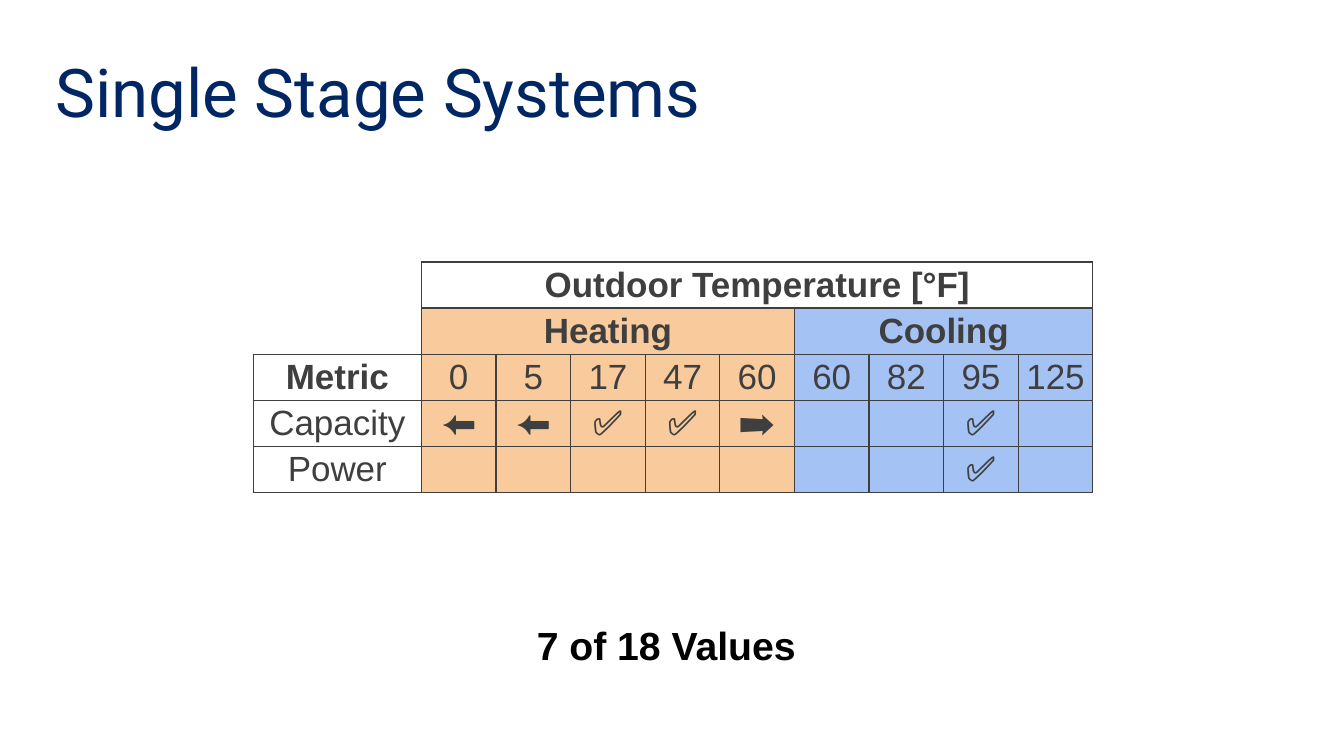
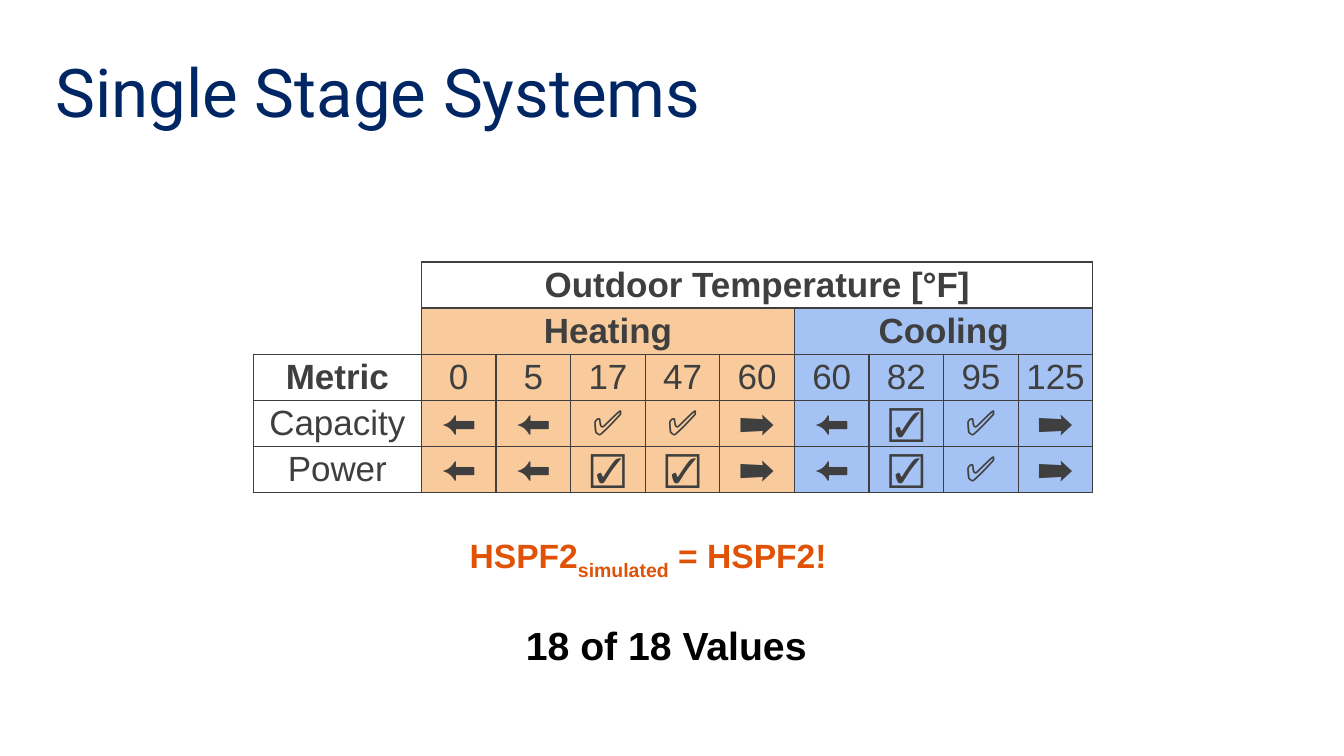
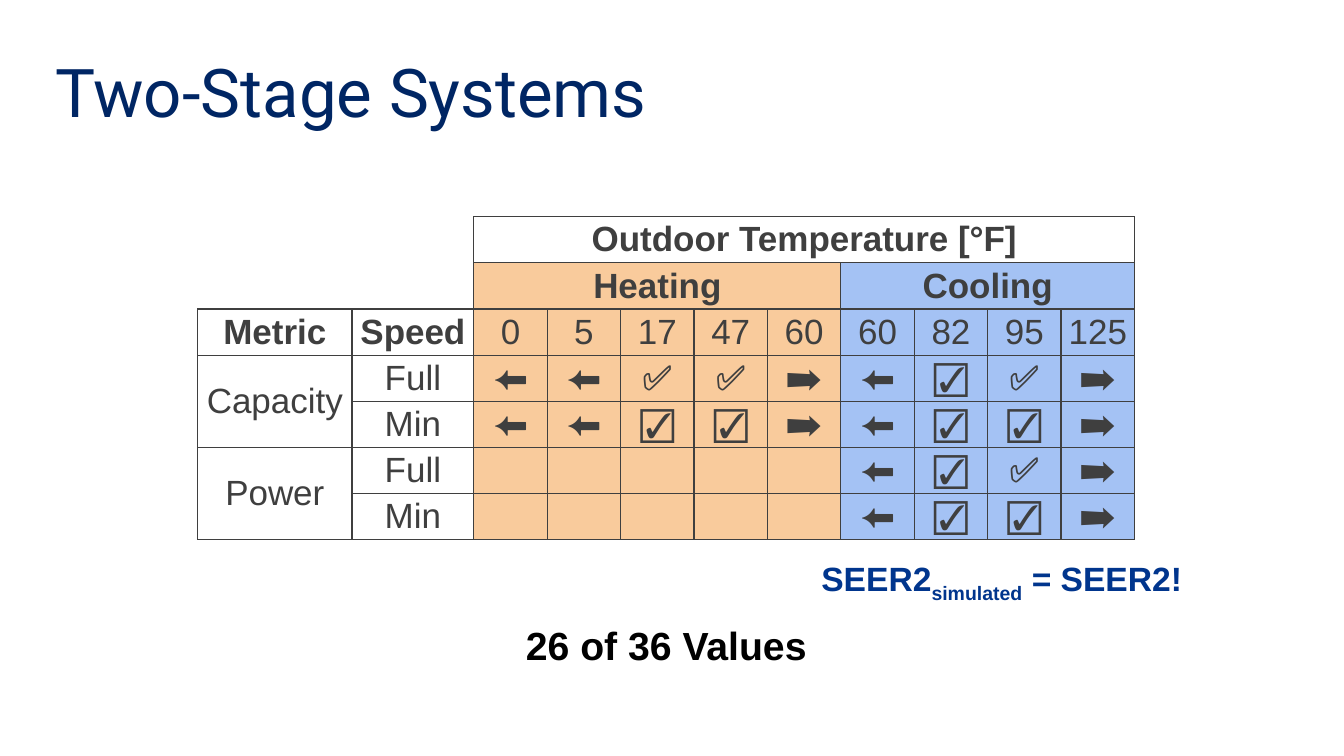
from lxml import etree
from pptx import Presentation
from pptx.dml.color import RGBColor
from pptx.enum.text import MSO_ANCHOR, MSO_AUTO_SIZE, PP_ALIGN
from pptx.oxml.ns import qn
from pptx.util import Cm, Pt

LEFT, CENTER = PP_ALIGN.LEFT, PP_ALIGN.CENTER
MIDDLE = MSO_ANCHOR.MIDDLE
NO_FIT = MSO_AUTO_SIZE.NONE
HUES = {
    "title": "002664", "text": "3F3F3F", "black": "000000",
    "heat": "F9CB9C", "cool": "A4C2F4", "hot": "E05206", "cold": "00358D",
}
MARKS = {"L": "⬅️", "R": "➡️", "V": "✅", "C": "☑️", ".": ""}
HEAT = ["0", "5", "17", "47", "60"]
COOL = ["60", "82", "95", "125"]
TEMPS = HEAT + COOL
ROW = 1.163


def add_run(para, text, size, hue, bold=False, font="Arial", base=0):
    """Add one styled run to a paragraph."""
    run = para.add_run()
    run.text = text
    run.font.size = Pt(size)
    run.font.name = font
    run.font.bold = bold
    run.font.color.rgb = RGBColor.from_string(HUES[hue])
    if base:
        run._r.get_or_add_rPr().set("baseline", str(base * 1000))


def add_slide(deck, title):
    """Add a slide with the shared title style."""
    slide = deck.slides.add_slide(deck.slide_layouts[5])
    head = slide.shapes.title
    head.left, head.top = Cm(1.14), Cm(1.14)
    head.width, head.height = Cm(31.55), Cm(2.31)
    frame = head.text_frame
    frame.auto_size = NO_FIT
    frame.vertical_anchor = MIDDLE
    para = frame.paragraphs[0]
    para.alignment = LEFT
    add_run(para, title, 48, "title", font="Roboto")
    return slide


def add_label(slide, left, top, width, height, wrap=True):
    """Add a centred text box and return its paragraph."""
    box = slide.shapes.add_textbox(Cm(left), Cm(top), Cm(width), Cm(height))
    box.text_frame.word_wrap = wrap
    para = box.text_frame.paragraphs[0]
    para.alignment = CENTER
    return para


def add_count(slide, text):
    """Add the count of values at the foot of a slide."""
    add_run(add_label(slide, 12.93, 15.54, 7.72, 1.45, False),
            text, 28, "black", True)


def add_note(slide, left, top, name, hue):
    """Add the note that a simulated rating equals the rated one."""
    para = add_label(slide, left, top, 12.55, 1.27)
    add_run(para, name, 24, hue, True)
    add_run(para, "simulated", 24, hue, True, base=-25)
    add_run(para, f" = {name}!", 24, hue, True)


def set_lines(cell, shown):
    """Draw the given sides of a cell and hide the others."""
    props = cell._tc.get_or_add_tcPr()
    for side in "LRTB":
        line = etree.SubElement(props, qn(f"a:ln{side}"), w=str(Pt(1)))
        if side in shown:
            fill = etree.SubElement(line, qn("a:solidFill"))
            etree.SubElement(fill, qn("a:srgbClr"), val=HUES["text"])
        else:
            etree.SubElement(line, qn("a:noFill"))


def set_cell(cell, text, hue, bold, shown):
    """Format one cell and write its text."""
    set_lines(cell, shown)
    if hue:
        cell.fill.solid()
        cell.fill.fore_color.rgb = RGBColor.from_string(HUES[hue])
    else:
        cell.fill.background()
    cell.vertical_anchor = MIDDLE
    cell.margin_left = cell.margin_right = Cm(0.08)
    cell.margin_top = cell.margin_bottom = Cm(0.05)
    para = cell.text_frame.paragraphs[0]
    para.alignment = CENTER
    if text:
        add_run(para, text, 25, "text", bold)


def add_grid(slide, left, top, leads, step, heads, rows):
    """Add a table of marks by metric and outdoor temperature."""
    lead = len(leads)
    split, last = lead + len(HEAT), lead + len(TEMPS) - 1
    widths = leads + [step] * len(TEMPS)
    blank = [""] * lead
    texts = [
        blank + ["Outdoor Temperature [°F]"] + [""] * last,
        blank + ["Heating"] + [""] * (len(HEAT) - 1) + ["Cooling"] + [""] * last,
        heads + TEMPS,
    ]
    texts += [names + [MARKS[code] for code in codes] for *names, codes in rows]
    grid = slide.shapes.add_table(
        len(texts), len(widths), Cm(left), Cm(top),
        Cm(sum(widths)), Cm(ROW * len(texts))).table
    grid.first_row = grid.horz_banding = False
    for col, width in zip(grid.columns, widths):
        col.width = Cm(width)
    for r, line in enumerate(texts):
        grid.rows[r].height = Cm(ROW)
        for c, text in enumerate(line[:last + 1]):
            hue, shown = None, "LRTB"
            if r < 2 and c < lead:
                shown = ("R" if c == lead - 1 else "") + ("B" if r else "")
            elif r and c >= lead:
                hue = "heat" if c < split else "cool"
            bold = r < 2 or (r == 2 and c < lead)
            set_cell(grid.cell(r, c), text, hue, bold, shown)
    for r, start, end in ((0, lead, last), (1, lead, split - 1), (1, split, last)):
        grid.cell(r, start).merge(grid.cell(r, end))
    return grid


def add_single(deck, cap, power, count):
    """Add a single stage slide."""
    slide = add_slide(deck, "Single Stage Systems")
    add_grid(slide, 6.38, 6.6, [4.24], 1.88, ["Metric"],
             [["Capacity", cap], ["Power", power]])
    add_count(slide, count)
    return slide


def add_double(deck):
    """Add the two-stage slide."""
    slide = add_slide(deck, "Two-Stage Systems")
    rows = [
        ["Capacity", "Full", "LLVVRLCVR"],
        ["", "Min", "LLCCRLCCR"],
        ["Power", "Full", ".....LCVR"],
        ["", "Min", ".....LCCR"],
    ]
    grid = add_grid(slide, 4.98, 5.46, [3.89, 3.07], 1.85,
                    ["Metric", "Speed"], rows)
    for r in (3, 5):
        grid.cell(r, 0).merge(grid.cell(r + 1, 0))
    add_count(slide, "26 of 36 Values")
    add_note(slide, 18.97, 13.94, "SEER2", "cold")


def main():
    """Build and save the deck."""
    deck = Presentation()
    deck.slide_width, deck.slide_height = Cm(33.87), Cm(19.05)
    add_single(deck, "LLVVR..V.", ".......V.", "7 of 18 Values")
    full = add_single(deck, "LLVVRLCVR", "LLCCRLCVR", "18 of 18 Values")
    add_note(full, 10.06, 13.36, "HSPF2", "hot")
    add_double(deck)
    deck.save("out.pptx")


if __name__ == "__main__":
    main()
